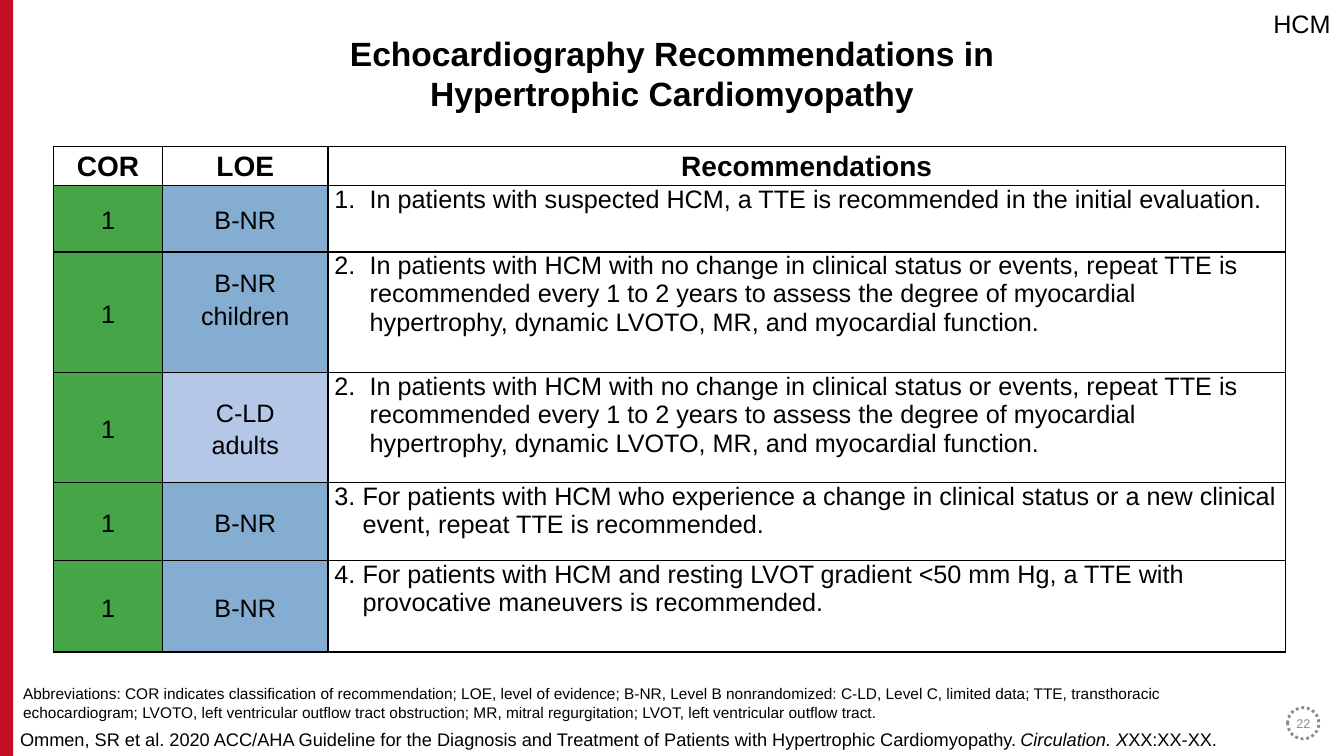
from lxml import etree
from pptx import Presentation, util as u
from pptx.dml.color import RGBColor
from pptx.enum import dml, shapes, text
from pptx.oxml import ns

COLORS = {"black": "000000", "white": "FFFFFF", "red": "C10E21", "gray": "8A8B8A",
          "green": "45A547", "blue": "85ADD1", "lilac": "B4C7E7"}

deck = Presentation()
deck.slide_width, deck.slide_height = u.Inches(13.33), u.Inches(7.5)
column, row = deck.slide_width / 100, deck.slide_height / 100
page = deck.slides.add_slide(deck.slide_layouts[5])


def grid(left, top, width, height):
    return [int(left * column), int(top * row), int(width * column), int(height * row)]


def add_span(para, words, size, color="black", bold=False, italic=False):
    span = para.add_run()
    span.text = words
    span.font.name, span.font.size = "Arial", u.Pt(size)
    span.font.bold, span.font.italic = bold, italic
    span.font.color.rgb = RGBColor.from_string(COLORS[color])


band = page.shapes.add_shape(shapes.MSO_SHAPE.RECTANGLE, *grid(0, 0, 0.98, 100))
band.shadow.inherit = False
band.fill.solid()
band.fill.fore_color.rgb = RGBColor.from_string(COLORS["red"])
band.line.fill.background()

ring = page.shapes.add_shape(shapes.MSO_SHAPE.OVAL, *grid(95.8, 93.6, 2.33, 4.13))
ring.shadow.inherit = False
ring.fill.background()
ring.line.color.rgb = RGBColor.from_string(COLORS["gray"])
ring.line.width = u.Pt(2)
ring.line.dash_style = dml.MSO_LINE.ROUND_DOT

title = page.shapes.title
title.left, title.top, title.width, title.height = grid(18.38, 3.6, 63.24, 12.13)
title.text_frame.vertical_anchor = text.MSO_ANCHOR.MIDDLE
title_para = title.text_frame.paragraphs[0]
title_para.alignment = text.PP_ALIGN.CENTER
add_span(title_para, "Echocardiography Recommendations in Hypertrophic Cardiomyopathy", 24, bold=True)

notes = [
    (grid(94, 0.4, 6, 5.33), 18, [("HCM", False)]),
    (grid(0.75, 95.73, 97.97, 4.27), 13, [
        ("Ommen, SR et al. 2020 ACC/AHA Guideline for the Diagnosis and Treatment of Patients "
         "with Hypertrophic Cardiomyopathy. ", False),
        ("Circulation. X", True), ("XX:XX-XX.", False)]),
    (grid(0.98, 89.87, 86.78, 6.27), 11, [
        ("Abbreviations: COR indicates classification of recommendation; LOE, level of evidence; "
         "B-NR, Level B nonrandomized: C-LD, Level C, limited data; TTE, transthoracic "
         "echocardiogram; LVOTO, left ventricular outflow tract obstruction; MR, mitral "
         "regurgitation; LVOT, left ventricular outflow tract.", False)]),
]
for place, size, spans in notes:
    box = page.shapes.add_textbox(*place)
    box.text_frame.word_wrap = True
    for words, italic in spans:
        add_span(box.text_frame.paragraphs[0], words, size, italic=italic)

number = page.shapes.add_textbox(*grid(95.33, 93.07, 3.3, 5.2))
number.text_frame.vertical_anchor = text.MSO_ANCHOR.MIDDLE
number.text_frame.word_wrap = True
number_para = number.text_frame.paragraphs[0]
number_para.alignment = text.PP_ALIGN.CENTER
add_span(number_para, "22", 9, "gray")

repeat_tte = ["In patients with HCM with no change in clinical status or events, repeat TTE is",
              "recommended every 1 to 2 years to assess the degree of myocardial",
              "hypertrophy, dynamic LVOTO, MR, and myocardial function."]
recommendations = [
    (["B-NR"], "blue", "1.", 2.63,
     ["In patients with suspected HCM, a TTE is recommended in the initial evaluation."]),
    (["B-NR", "children"], "blue", "2.", 2.63, repeat_tte),
    (["C-LD", "adults"], "lilac", "2.", 2.63, repeat_tte),
    (["B-NR"], "blue", "3.", 2.1,
     ["For patients with HCM who experience a change in clinical status or a new clinical",
      "event, repeat TTE is recommended."]),
    (["B-NR"], "blue", "4.", 2.1,
     ["For patients with HCM and resting LVOT gradient <50 mm Hg, a TTE with",
      "provocative maneuvers is recommended."]),
]
widths = [8.12, 12.3, 71.26]
heights = [5.2, 8.8, 16, 14.53, 10.27, 12.13]
table = page.shapes.add_table(len(heights), len(widths),
                              *grid(3.98, 19.33, sum(widths), sum(heights))).table
table.first_row = table.horz_banding = False
for index, width in enumerate(widths):
    table.columns[index].width = int(width * column)
for index, height in enumerate(heights):
    table.rows[index].height = int(height * row)

for cell in table.iter_cells():
    cell.margin_left = cell.margin_right = int(0.48 * column)
    cell.margin_top = cell.margin_bottom = 0
    for side in ("lnL", "lnR", "lnT", "lnB"):
        border = etree.SubElement(cell._tc.get_or_add_tcPr(), ns.qn(f"a:{side}"), w="12700")
        paint = etree.SubElement(border, ns.qn("a:solidFill"))
        etree.SubElement(paint, ns.qn("a:srgbClr"), val=COLORS["black"])

grades = [[(["COR"], "white"), (["LOE"], "white"), (["Recommendations"], "white")]]
grades += [[(["1"], "green"), (levels, color)] for levels, color, *_ in recommendations]
for line, entries in enumerate(grades):
    for index, (labels, color) in enumerate(entries):
        cell = table.cell(line, index)
        cell.fill.solid()
        cell.fill.fore_color.rgb = RGBColor.from_string(COLORS[color])
        cell.vertical_anchor = text.MSO_ANCHOR.MIDDLE if line else text.MSO_ANCHOR.TOP
        for position, label in enumerate(labels):
            para = cell.text_frame.add_paragraph() if position else cell.text_frame.paragraphs[0]
            para.alignment = text.PP_ALIGN.CENTER
            para.line_spacing = 1.15
            add_span(para, label, 18 if line else 20, bold=line == 0)
table.cell(2, 1).margin_bottom = int(3.8 * row)

for line, (_, _, item, indent, lines) in enumerate(recommendations, start=1):
    cell = table.cell(line, 2)
    cell.fill.solid()
    cell.fill.fore_color.rgb = RGBColor.from_string(COLORS["white"])
    para = cell.text_frame.paragraphs[0]
    hanging = int(indent * column)
    para._p.get_or_add_pPr().set("marL", str(hanging))
    para._p.get_or_add_pPr().set("indent", str(-hanging))
    add_span(para, item + "\t" + lines[0], 18)
    for words in lines[1:]:
        para.add_line_break()
        add_span(para, words, 18)

deck.save("out.pptx")
